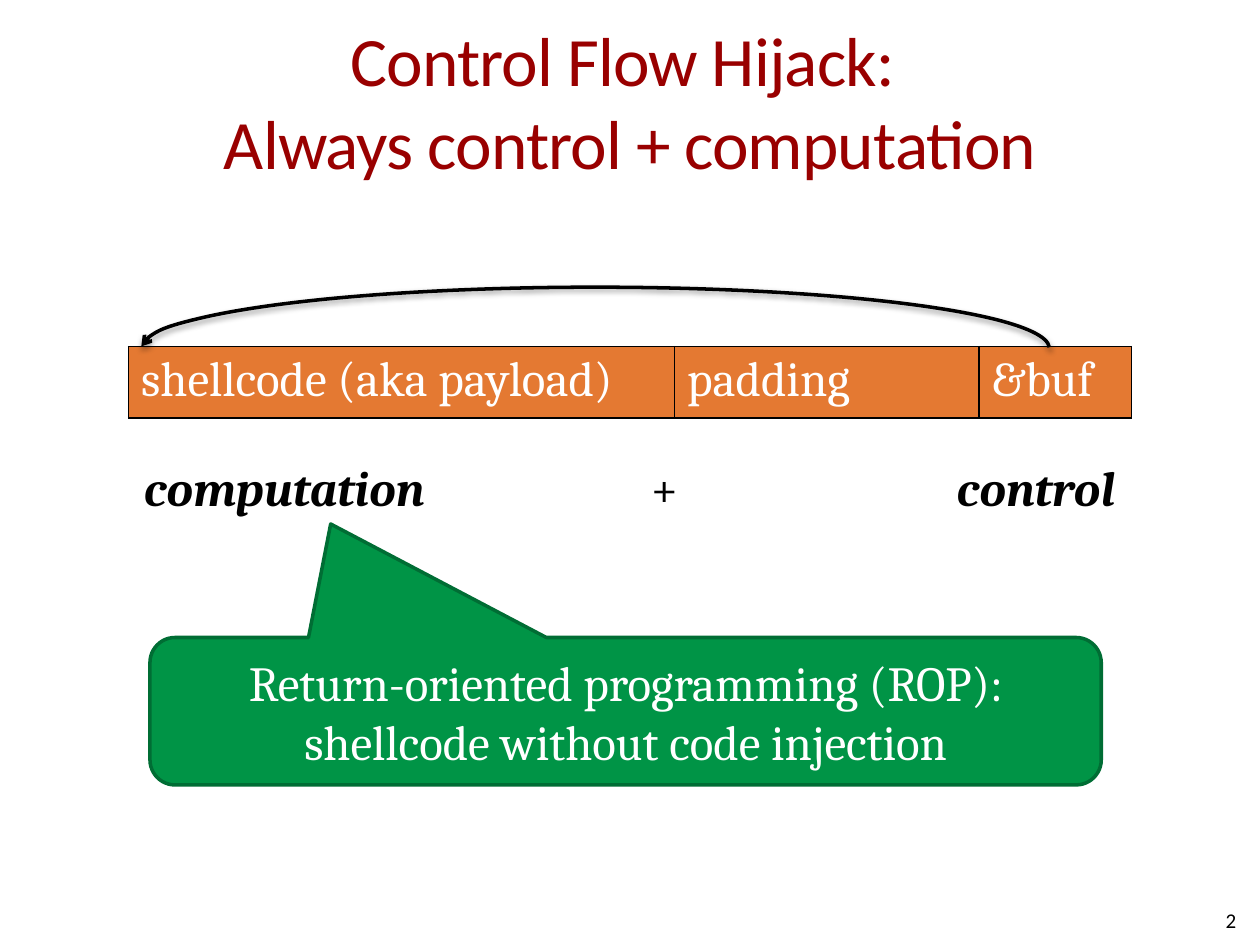
from lxml import etree
from pptx import Presentation
from pptx.dml.color import RGBColor
from pptx.enum import shapes, text
from pptx.oxml import parse_xml
from pptx.oxml.ns import nsdecls, qn
from pptx.util import Pt

RED = RGBColor(0x99, 0x00, 0x00)
BLACK = RGBColor(0, 0, 0)
WHITE = RGBColor(0xFF, 0xFF, 0xFF)
ORANGE = RGBColor(0xE4, 0x79, 0x32)
GREEN = RGBColor(0x00, 0x94, 0x46)
DARK_GREEN = RGBColor(0x00, 0x6D, 0x34)


def set_font(p, name, size, color):
    p.font.name, p.font.size = name, Pt(size)
    p.font.color.rgb = color


def add_text(x, y, w, h):
    tf = s.shapes.add_textbox(Pt(x), Pt(y), Pt(w), Pt(h)).text_frame
    tf.word_wrap = True
    return tf


prs = Presentation()
prs.slide_width, prs.slide_height = Pt(720), Pt(540)
s = prs.slides.add_slide(prs.slide_layouts[5])

sp = s.shapes.title
sp.left, sp.top, sp.width, sp.height = Pt(36), Pt(12.24), Pt(648), Pt(90)
tf = sp.text_frame
tf.margin_left = tf.margin_right = 0
tf.vertical_anchor = text.MSO_ANCHOR.MIDDLE
tf.auto_size = text.MSO_AUTO_SIZE.NONE
p = tf.paragraphs[0]
p.text = "Control Flow Hijack: \vAlways control + computation"
p.alignment = text.PP_ALIGN.CENTER
set_font(p, "Calibri", 39.6, RED)
for r in p.runs:
    r.font._element.set("spc", "-50")

tf = add_text(36, 257.76, 648, 224.64)
tf.margin_left = Pt(46.2)
p = tf.paragraphs[0]
p.space_before = Pt(5.6)
set_font(p, "Cambria", 28, BLACK)
for label, strong in [("computation", True), ("\t+\t", False), ("control", True)]:
    r = p.add_run()
    r.text = label
    r.font.bold = r.font.italic = strong
tabs = parse_xml(f"<a:tabLst {nsdecls('a')}/>")
for pos, align in [(297.5, "ctr"), (555, "r")]:
    etree.SubElement(tabs, qn("a:tab"), pos=str(Pt(pos)), algn=align)
p._p.pPr.find(qn("a:defRPr")).addprevious(tabs)

widths = [312, 174, 87]
labels = ["shellcode (aka payload)", "padding", "&buf"]
table = s.shapes.add_table(1, 3, Pt(73.5), Pt(198), Pt(sum(widths)), Pt(40)).table
for i, (width, label) in enumerate(zip(widths, labels)):
    table.columns[i].width = Pt(width)
    cell = table.cell(0, i)
    cell.text = label
    set_font(cell.text_frame.paragraphs[0], "Cambria", 28, WHITE)
    cell.text_frame.paragraphs[0].font.bold = False
    cell.fill.solid()
    cell.fill.fore_color.rgb = ORANGE
    for k, side in enumerate("LRTB"):
        cell._tc.tcPr.insert(k, parse_xml(
            f'<a:ln{side} {nsdecls("a")} w="{Pt(1)}"><a:solidFill>'
            f'<a:srgbClr val="{BLACK}"/></a:solidFill></a:ln{side}>'))

sp = s.shapes.add_shape(shapes.MSO_SHAPE.ARC, Pt(80.64), Pt(164.16), Pt(519), Pt(69.84))
sp.adjustments[0], sp.adjustments[1] = 0.08, 107.85
sp._element.spPr.find(qn("a:xfrm")).set("flipV", "1")
sp.fill.background()
sp.line.color.rgb = BLACK
sp.line.width = Pt(2)
etree.SubElement(sp.line._get_or_add_ln(), qn("a:tailEnd"), type="arrow")
sp.shadow.inherit = False
sp._element.spPr.find(qn("a:effectLst")).append(parse_xml(
    f'<a:outerShdw {nsdecls("a")} blurRad="{Pt(3.1)}" dist="{Pt(1.6)}" dir="5400000" '
    f'rotWithShape="0"><a:srgbClr val="{BLACK}"><a:alpha val="38000"/></a:srgbClr></a:outerShdw>'))

tf = add_text(545.76, 511.2, 167.76, 28.8)
tf.vertical_anchor = text.MSO_ANCHOR.MIDDLE
p = tf.paragraphs[0]
p.text = "2"
p.alignment = text.PP_ALIGN.RIGHT
set_font(p, "Calibri", 12, BLACK)

sp = s.shapes.add_shape(shapes.MSO_SHAPE.ROUNDED_RECTANGULAR_CALLOUT,
                        Pt(85.68), Pt(364.32), Pt(543.6), Pt(84.24))
for i, value in enumerate([-0.31, -1.27, 0.17]):
    sp.adjustments[i] = value
sp.shadow.inherit = False
sp.fill.solid()
sp.fill.fore_color.rgb = GREEN
sp.line.color.rgb = DARK_GREEN
sp.line.width = Pt(2)
tf = sp.text_frame
tf.word_wrap = True
tf.vertical_anchor = text.MSO_ANCHOR.MIDDLE
p = tf.paragraphs[0]
p.text = "Return-oriented programming (ROP): shellcode without code injection"
p.alignment = text.PP_ALIGN.CENTER
set_font(p, "Cambria", 28, WHITE)

prs.save("out.pptx")
